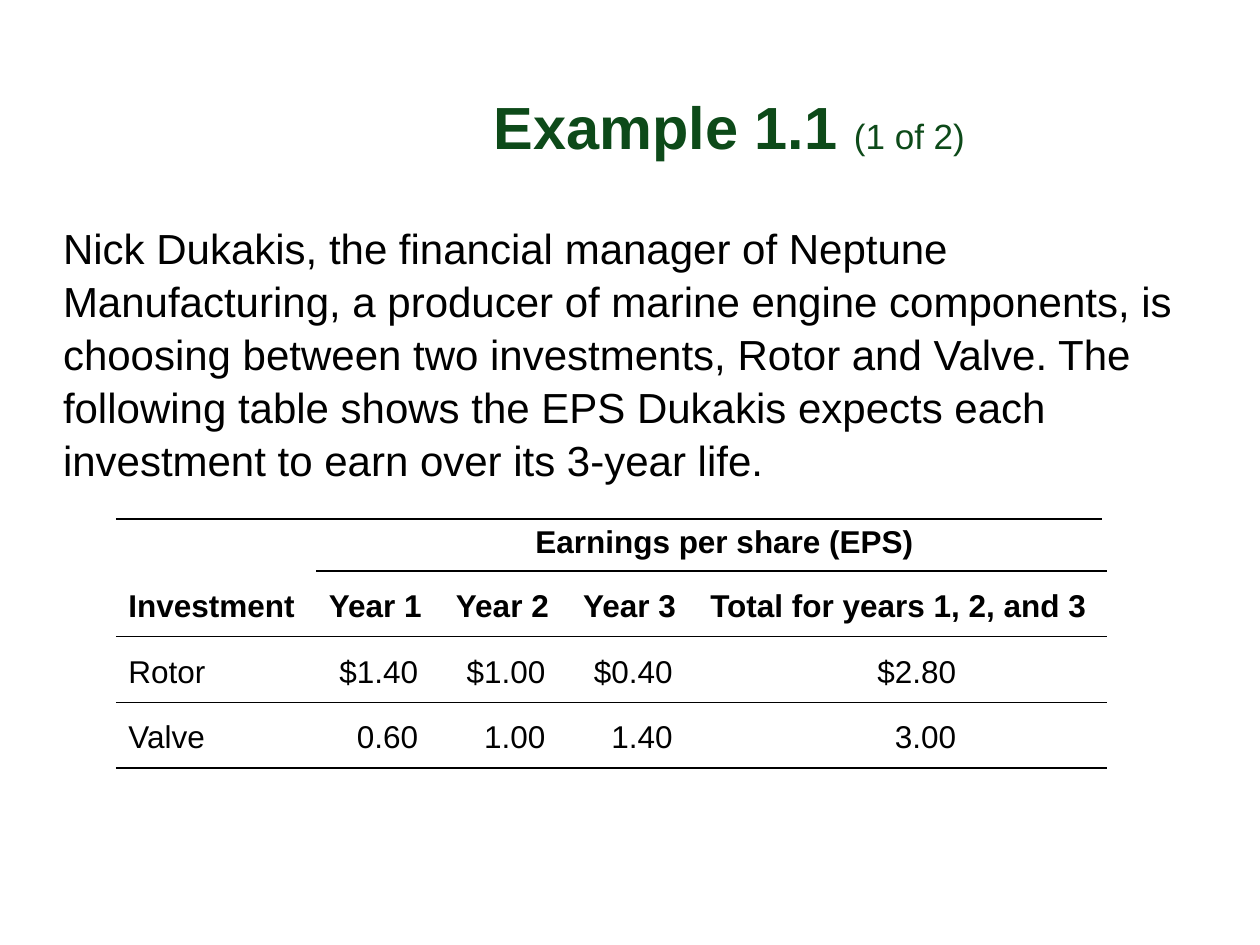
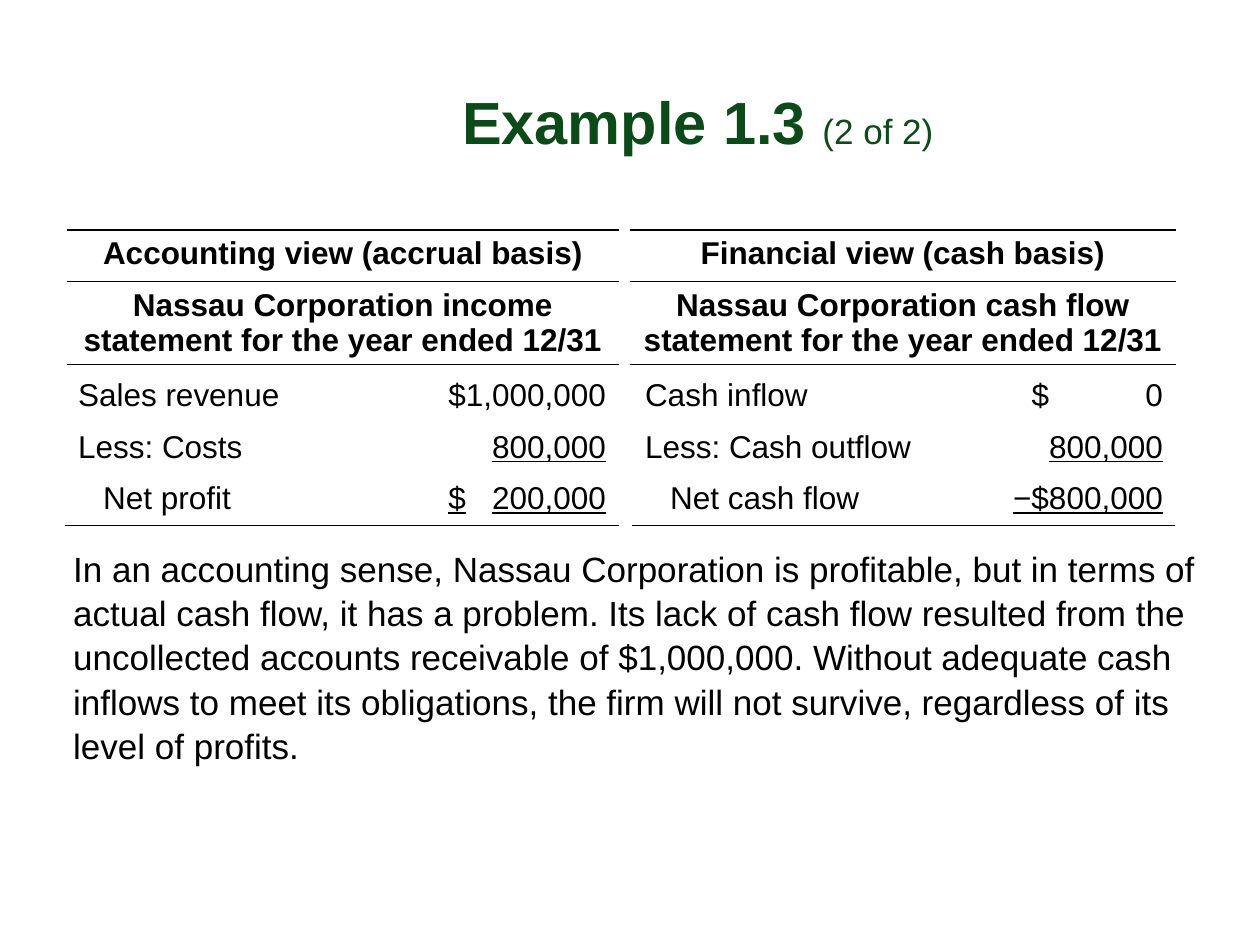
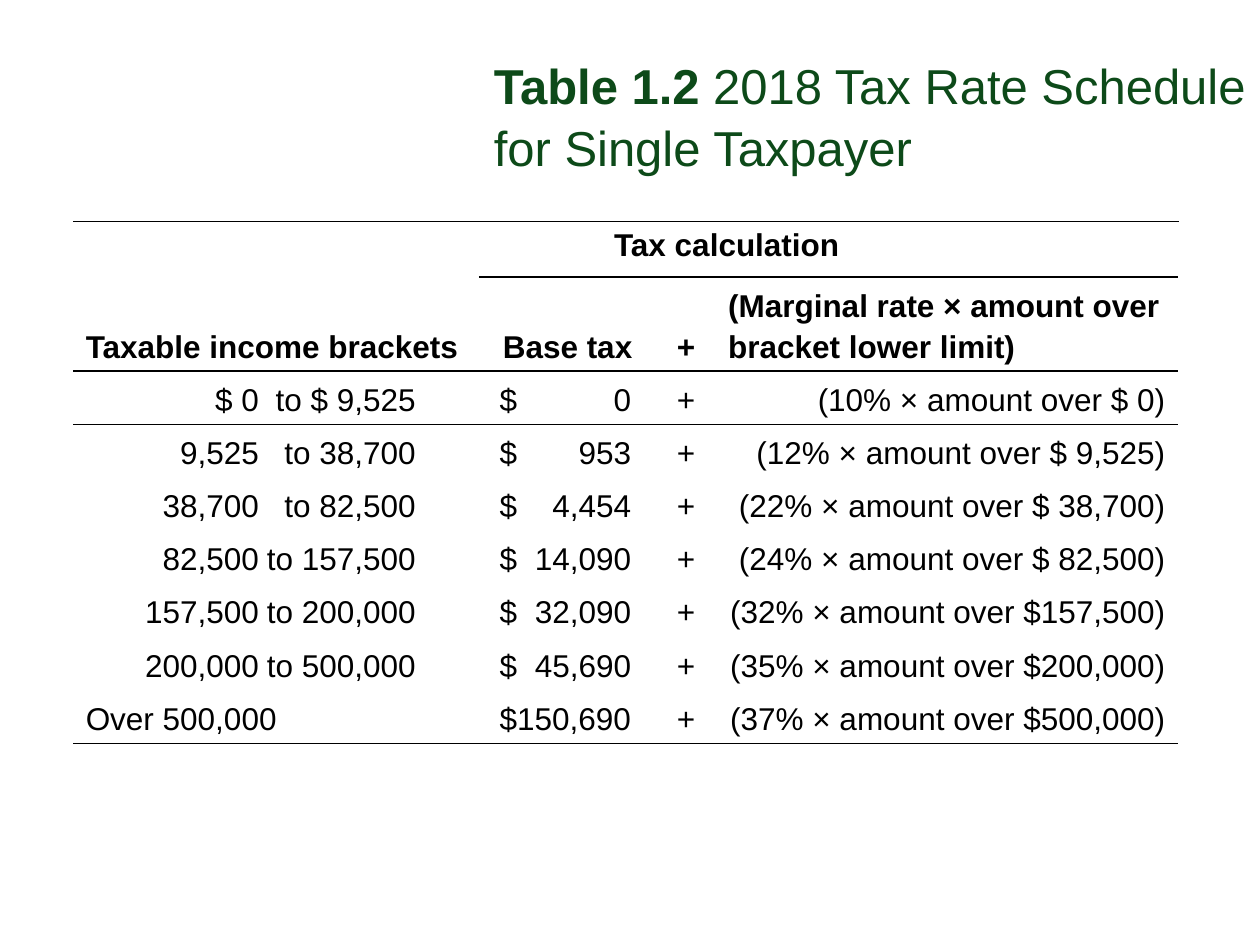
from dataclasses import dataclass

from lxml import etree
from pptx import Presentation
from pptx.dml.color import RGBColor
from pptx.enum.text import MSO_ANCHOR, MSO_AUTO_SIZE, PP_ALIGN
from pptx.oxml.ns import qn
from pptx.util import Pt

LEFT, CENTER, RIGHT = PP_ALIGN.LEFT, PP_ALIGN.CENTER, PP_ALIGN.RIGHT
TOP, BOTTOM = MSO_ANCHOR.TOP, MSO_ANCHOR.BOTTOM
NO_FIT = MSO_AUTO_SIZE.NONE
TITLE_AND_BODY, TITLE_ONLY = 1, 5
NO_TABLE_STYLE = "{2D5ABB26-0587-4C30-8999-92F81FD0307C}"


@dataclass(frozen=True)
class Theme:
    font: str = "Arial"
    title_color: str = "0D4A19"
    text_color: str = "000000"
    title: int = 34
    title_part: int = 20
    table_title: int = 28
    body: int = 24
    body_small: int = 20
    cell: int = 18
    rule: int = 1
    text_spacing: float = 1.05
    cell_spacing: float = 1.15
    pad: float = 7.2
    pad_y: float = 3.6
    ledger_pad_y: float = 0.72


THEME = Theme()


# Text
def style_run(r, size, color, bold=False, underline=False):
    f = r.font
    f.name, f.size, f.bold = THEME.font, Pt(size), bold
    f.color.rgb = RGBColor.from_string(color)
    if underline:
        f.underline = True


def set_insets(target, left, top, right, bottom):
    target.margin_left, target.margin_top = Pt(left), Pt(top)
    target.margin_right, target.margin_bottom = Pt(right), Pt(bottom)


def place(sp, left, top, width, height, anchor):
    """Move a placeholder and return its first paragraph."""
    sp.left, sp.top, sp.width, sp.height = Pt(left), Pt(top), Pt(width), Pt(height)
    tf = sp.text_frame
    tf.word_wrap, tf.auto_size, tf.vertical_anchor = True, NO_FIT, anchor
    set_insets(tf, 0, 0, 0, 0)
    p = tf.paragraphs[0]
    p.alignment, p.line_spacing, p.space_before = LEFT, THEME.text_spacing, Pt(0)
    return p


def add_title(s, left, top, strong, plain, sizes, width=648, anchor=BOTTOM):
    p = place(s.shapes.title, left, top, width, 86.4, anchor)
    for text, size, bold in zip((strong, plain), sizes, (True, False)):
        r = p.add_run()
        r.text = text
        style_run(r, size, THEME.title_color, bold)


def add_body(s, left, top, height, text, size):
    p = place(s.placeholders[1], left, top, 648, height, TOP)
    p.text = text
    pPr = p._p.get_or_add_pPr()
    pPr.set("marL", "0")
    pPr.set("indent", "0")
    etree.SubElement(pPr, qn("a:buNone"))
    style_run(p.runs[0], size, THEME.text_color)


# Tables
def add_grid(s, left, top, widths, heights):
    frame = s.shapes.add_table(len(heights), len(widths), Pt(left), Pt(top),
                               Pt(sum(widths)), Pt(sum(heights)))
    table = frame.table
    table.first_row = table.horz_banding = False
    table._tbl.tblPr.find(qn("a:tableStyleId")).text = NO_TABLE_STYLE
    for column, width in zip(table.columns, widths):
        column.width = Pt(width)
    for row, height in zip(table.rows, heights):
        row.height = Pt(height)
    return table


def add_rules(cell, sides):
    """Draw rules on the sides named by T and B."""
    tcPr = cell._tc.get_or_add_tcPr()
    for side in sides:
        ln = etree.SubElement(tcPr, qn("a:ln" + side), w=str(Pt(THEME.rule)))
        fill = etree.SubElement(ln, qn("a:solidFill"))
        etree.SubElement(fill, qn("a:srgbClr"), val=THEME.text_color)


def add_right_tabs(p, stops):
    tabs = etree.SubElement(p._p.get_or_add_pPr(), qn("a:tabLst"))
    for stop in stops:
        etree.SubElement(tabs, qn("a:tab"), pos=str(Pt(stop)), algn="r")


def fill_cell(cell, text, align=LEFT, bold=False, underline=False, rules="", left=THEME.pad,
              right=THEME.pad, pad_y=THEME.pad_y, anchor=TOP, spacing=THEME.cell_spacing, tabs=()):
    add_rules(cell, rules)
    cell.fill.background()
    set_insets(cell, left, pad_y, right, pad_y)
    cell.vertical_anchor = anchor
    p = cell.text_frame.paragraphs[0]
    p.text = text
    if tabs:
        add_right_tabs(p, tabs)
    p.alignment = align
    if spacing:
        p.line_spacing = spacing
    style_run(p.runs[0], THEME.cell, THEME.text_color, bold, underline)


def fill_amount(table, row, col, text, width, right=THEME.pad, **style):
    """Set an amount whose sign and digits stand at the two ends of a width."""
    left = table.columns[col].width.pt - right - width
    fill_cell(table.cell(row, col), text, left=left, right=right - 4, tabs=[width], **style)


def add_spanner(s, left, top, width, text, right):
    """Add the heading that stands above several columns."""
    table = add_grid(s, left, top, [width], [29.5])
    fill_cell(table.cell(0, 0), text, RIGHT, bold=True, rules="T", right=right, spacing=None)


# Slide content
def add_eps_table(s):
    add_spanner(s, 66.2, 296.6, 563.8, "Earnings per share (EPS)", right=108)
    rows = [
        ["Investment", "Year 1", "Year 2", "Year 3", "Total for years 1, 2, and 3"],
        ["Rotor", "$1.40", "$1.00", "$0.40", "$2.80"],
        ["Valve", "0.60", "1.00", "1.40", "3.00"],
    ]
    table = add_grid(s, 66.2, 326.2, [114.5] + [72.7] * 3 + [234], [37.2] * 3)
    for i, row in enumerate(rows):
        for j, text in enumerate(row):
            number = i > 0 and j > 0
            right = (86.4 if j == 4 else 14.4) if number else THEME.pad
            fill_cell(table.cell(i, j), text, RIGHT if number else LEFT, bold=i == 0,
                      rules="TB" if i or j else "B", right=right, pad_y=7.2)


def add_statement(s, left, width, heading, subheading):
    table = add_grid(s, left, 131.4, [width], [29.5, 47.5])
    for i, text in enumerate((heading, subheading)):
        fill_cell(table.cell(i, 0), text, CENTER, bold=True, rules="TB", spacing=None)


def add_ledger(s, left, widths, rows):
    """Each row is a label, an amount and the amount's width if it has a tab."""
    table = add_grid(s, left, 212.4, widths, [29.3] * len(rows))
    last = len(rows) - 1
    for i, (label, amount, width) in enumerate(rows):
        style = {"rules": "B" if i == last else "", "pad_y": THEME.ledger_pad_y}
        fill_cell(table.cell(i, 0), label, left=21.6 if i == last else THEME.pad, **style)
        style["underline"] = i > 0
        if width:
            fill_amount(table, i, 1, amount, width, **style)
        else:
            fill_cell(table.cell(i, 1), amount, RIGHT, **style)


def add_tax_table(s):
    add_spanner(s, 41.8, 126.7, 632.2, "Tax calculation", right=194.4)
    headings = [("Taxable income brackets", LEFT), ("Base tax", CENTER), ("+", CENTER),
                ("(Marginal rate × amount over bracket lower limit)", LEFT)]
    rows = [
        ("\t$ 0\tto $ 9,525", "$\t0", "(10% × amount over $ 0)"),
        ("\t9,525\tto 38,700", "$\t953", "(12% × amount over $ 9,525)"),
        ("\t38,700\tto 82,500", "$\t4,454", "(22% × amount over $ 38,700)"),
        ("\t82,500\tto 157,500", "$\t14,090", "(24% × amount over $ 82,500)"),
        ("\t157,500\tto 200,000", "$\t32,090", "(32% × amount over $157,500)"),
        ("\t200,000\tto 500,000", "$\t45,690", "(35% × amount over $200,000)"),
        ("Over 500,000", "$150,690", "(37% × amount over $500,000)"),
    ]
    table = add_grid(s, 41.8, 158.4, [231.8, 101.5, 33.8, 264.2], [53.7] + [30.4] * len(rows))
    for j, (text, align) in enumerate(headings):
        fill_cell(table.cell(0, j), text, align, bold=True, rules="TB" if j else "B", anchor=BOTTOM)
    for i, (bracket, base, marginal) in enumerate(rows, 1):
        rules = {1: "TB", len(rows): "B"}.get(i, "")
        fill_cell(table.cell(i, 0), bracket, rules=rules, tabs=[99, 188.6])
        fill_amount(table, i, 1, base, 75.2, right=14.4, rules=rules)
        fill_cell(table.cell(i, 2), "+", CENTER, rules=rules)
        fill_cell(table.cell(i, 3), marginal, RIGHT, rules=rules)


def main():
    prs = Presentation()
    prs.slide_width, prs.slide_height = Pt(720), Pt(540)
    example_sizes = (THEME.title, THEME.title_part)

    # Earnings per share of two investments
    s = prs.slides.add_slide(prs.slide_layouts[TITLE_AND_BODY])
    add_title(s, 282.2, 5.8, "Example 1.1 ", "(1 of 2)", example_sizes)
    add_body(s, 36, 126, 149.8,
             "Nick Dukakis, the financial manager of Neptune Manufacturing, a producer of marine "
             "engine components, is choosing between two investments, Rotor and Valve. The "
             "following table shows the EPS Dukakis expects each investment to earn over its "
             "3-year life.", THEME.body)
    add_eps_table(s)

    # Accrual and cash statements
    s = prs.slides.add_slide(prs.slide_layouts[TITLE_AND_BODY])
    add_title(s, 264.2, 2.9, "Example 1.3 ", "(2 of 2)", example_sizes)
    add_statement(s, 38.2, 315.4, "Accounting view (accrual basis)",
                  "Nassau Corporation income statement for the year ended 12/31")
    add_ledger(s, 37.4, [176.4, 139.7], [
        ("Sales revenue", "$1,000,000", None),
        ("Less: Costs", "\t800,000", 90),
        ("Net profit", "$\t200,000", 90),
    ])
    add_statement(s, 360, 311.8, "Financial view (cash basis)",
                  "Nassau Corporation cash flow statement for the year ended 12/31")
    add_ledger(s, 361.4, [172.8, 137.5], [
        ("Cash inflow", "$\t0", 75),
        ("Less: Cash outflow", "\t800,000", 85),
        ("Net cash flow", "−$800,000", None),
    ])
    add_body(s, 41.8, 311.8, 176.4,
             "In an accounting sense, Nassau Corporation is profitable, but in terms of actual "
             "cash flow, it has a problem. Its lack of cash flow resulted from the uncollected "
             "accounts receivable of $1,000,000. Without adequate cash inflows to meet its "
             "obligations, the firm will not survive, regardless of its level of profits.",
             THEME.body_small)

    # Tax rate schedule
    s = prs.slides.add_slide(prs.slide_layouts[TITLE_ONLY])
    add_title(s, 282.2, 30.2, "Table 1.2", " 2018 Tax Rate Schedule for Single Taxpayer",
              (THEME.table_title, THEME.table_title), width=450, anchor=TOP)
    add_tax_table(s)

    prs.save("out.pptx")


if __name__ == "__main__":
    main()
